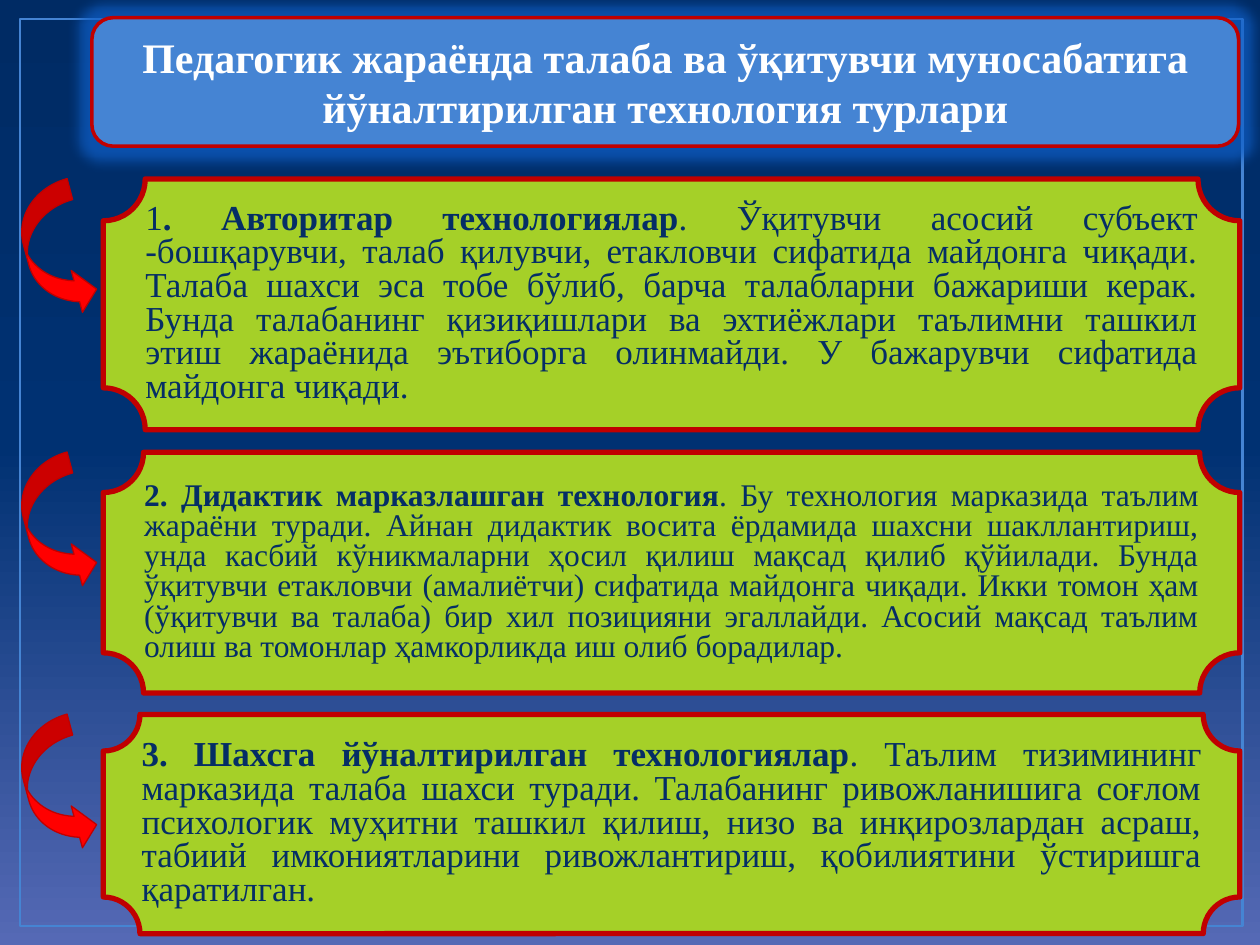
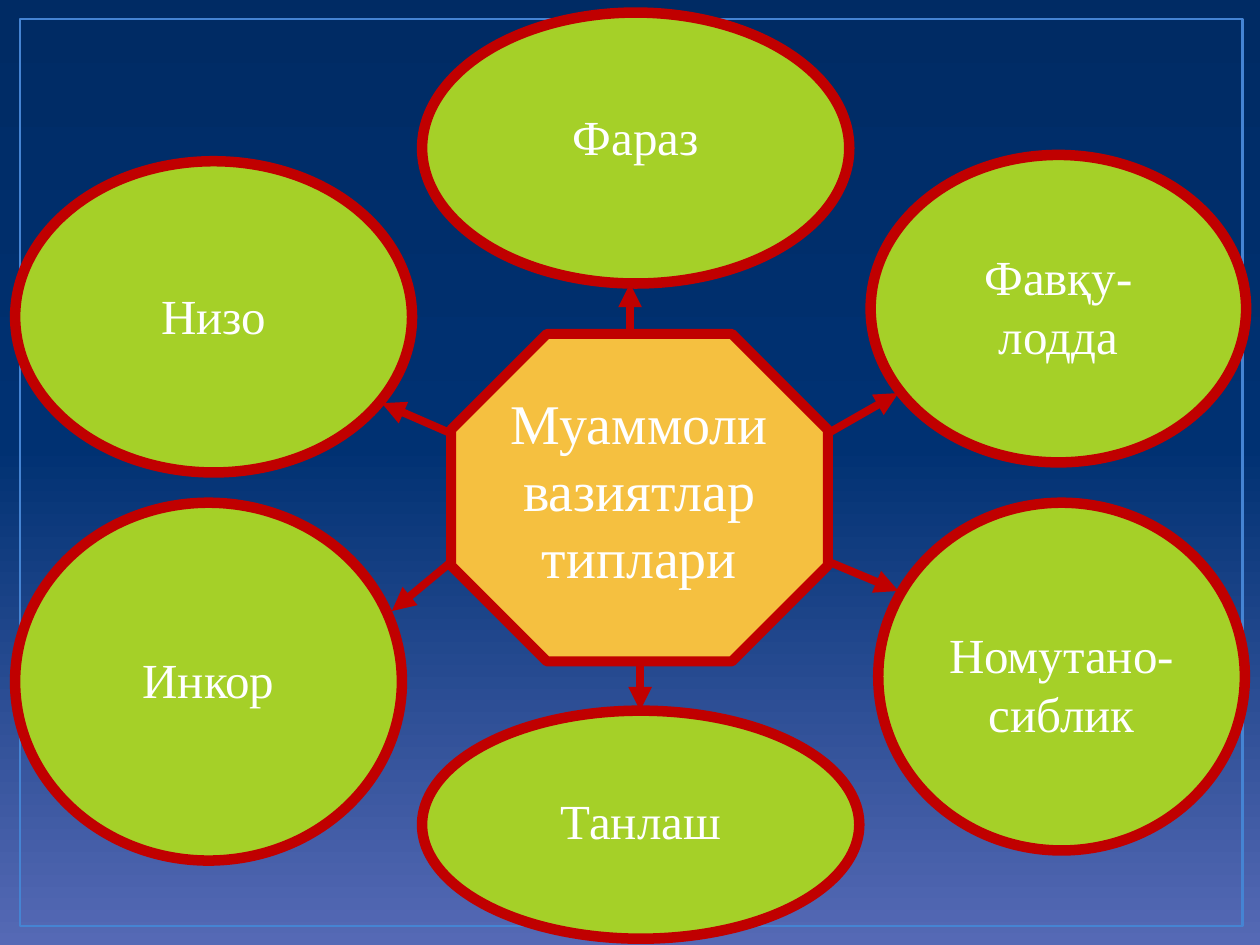
from copy import deepcopy
from dataclasses import dataclass

from lxml import etree
from pptx import Presentation
from pptx.dml.color import RGBColor
from pptx.enum import shapes, text
from pptx.oxml import ns
from pptx.util import Inches, Pt

# Shared style
FONT = "Times New Roman"
BLUE = RGBColor(0x45, 0x84, 0xD3)
GLOW = RGBColor(0x0F, 0x5F, 0xC8)
RED = RGBColor(0xFF, 0x00, 0x00)
DARK_RED = RGBColor(0xC0, 0x00, 0x00)
GREEN = RGBColor(0xA5, 0xD0, 0x28)
YELLOW = RGBColor(0xF5, 0xC0, 0x40)
NAVY = RGBColor(0x05, 0x2E, 0x65)
WHITE = RGBColor(0xFF, 0xFF, 0xFF)
BACKGROUND_STOPS = [
    (0, RGBColor(0x55, 0x69, 0xB5)),
    (0.53, RGBColor(0x00, 0x31, 0x72)),
    (1, RGBColor(0x00, 0x2B, 0x64)),
]
TITLE_ONLY, BLANK = 5, 6
LINE_HEIGHT = 1.15

Box = tuple[float, float, float, float]


@dataclass
class Technology:
    top: float
    height: float
    size: int
    runs: list[tuple[str, bool]]


@dataclass
class Situation:
    label: str
    box: Box
    gap: int  # space above the label, in points
    arrow: Box  # start x, start y, end x, end y


TECHNOLOGIES = [
    Technology(1.42, 1.99, 20, [
        ("1", False),
        (". Авторитар технологиялар", True),
        (". Ўқитувчи асосий субъект -бошқарувчи, талаб қилувчи, етакловчи "
         "сифатида майдонга чиқади. Талаба шахси эса тобе бўлиб, барча "
         "талабларни бажариши керак. Бунда талабанинг қизиқишлари ва "
         "эхтиёжлари таълимни ташкил этиш жараёнида эътиборга олинмайди. "
         "У бажарувчи сифатида майдонга чиқади.", False),
    ]),
    Technology(3.59, 1.91, 18, [
        ("2. Дидактик марказлашган технология", True),
        (". Бу технология марказида таълим жараёни туради. Айнан дидактик "
         "восита ёрдамида шахсни шакллантириш, унда касбий кўникмаларни "
         "ҳосил қилиш мақсад қилиб қўйилади. Бунда ўқитувчи етакловчи "
         "(амалиётчи) сифатида майдонга чиқади. Икки томон ҳам (ўқитувчи ва "
         "талаба) бир хил позицияни эгаллайди. Асосий мақсад таълим олиш ва "
         "томонлар ҳамкорликда иш олиб борадилар.", False),
    ]),
    Technology(5.67, 1.74, 20, [
        ("3. Шахсга йўналтирилган технологиялар", True),
        (". Таълим тизимининг марказида талаба шахси туради. Талабанинг "
         "ривожланишига соғлом психологик муҳитни ташкил қилиш, низо ва "
         "инқирозлардан асраш, табиий имкониятларини ривожлантириш, "
         "қобилиятини ўстиришга қаратилган.", False),
    ]),
]

SITUATIONS = [
    Situation("Фавқу-лодда", (6.91, 1.23, 2.98, 2.44), 20, (6.57, 3.44, 7.13, 3.12)),
    Situation("Номутано-сиблик", (6.97, 3.99, 2.91, 2.76), 32, (6.58, 4.46, 7.13, 4.69)),
    Situation("Танлаш", (3.35, 5.64, 3.47, 1.81), 20, (5.08, 5.25, 5.08, 5.64)),
    Situation("Инкор", (0.12, 3.99, 3.07, 2.84), 44, (3.58, 4.46, 3.11, 4.85)),
    Situation("Низо", (0.12, 1.28, 3.15, 2.47), 36, (3.58, 3.44, 3.03, 3.2)),
    Situation("Фараз", (3.35, 0.1, 3.39, 2.15), 24, (5, 2.65, 5, 2.25)),
]


def set_background(presentation) -> None:
    """Give the master its three-stop gradient, running upwards."""
    fill = presentation.slide_master.background.fill
    fill.gradient()
    fill.gradient_angle = 90
    stop_list = fill._fill._gradFill.gsLst
    stop_list.append(deepcopy(stop_list[-1]))
    for stop, (position, color) in zip(fill.gradient_stops, BACKGROUND_STOPS):
        stop.position = position
        stop.color.rgb = color


def add_shape(slide, kind, box: Box, *, fill=None, line=DARK_RED,
              width: float = 1, adjustments=()):
    shape = slide.shapes.add_shape(kind, *map(Inches, box))
    shape.shadow.inherit = False
    if fill is None:
        shape.fill.background()
    else:
        shape.fill.solid()
        shape.fill.fore_color.rgb = fill
    shape.line.color.rgb = line
    shape.line.width = Pt(width)
    for index, value in enumerate(adjustments):
        shape.adjustments[index] = value
    return shape


def write(shape, runs: list[tuple[str, bool]], *, size: int, color=WHITE,
          align=text.PP_ALIGN.CENTER, anchor=text.MSO_ANCHOR.MIDDLE,
          spacing: float | None = None, side: float = 0.1,
          top: float = 0.05) -> None:
    """Write (text, bold) runs as the one paragraph of a shape."""
    frame = shape.text_frame
    frame.word_wrap = True
    frame.auto_size = text.MSO_AUTO_SIZE.NONE
    frame.vertical_anchor = anchor
    frame.margin_left = frame.margin_right = Inches(side)
    frame.margin_top, frame.margin_bottom = Inches(top), Inches(0.05)
    paragraph = frame.paragraphs[0]
    paragraph.alignment = align
    if spacing:
        paragraph.line_spacing = spacing
    for content, bold in runs:
        run = paragraph.add_run()
        run.text = content
        run.font.name = FONT
        run.font.size = Pt(size)
        run.font.bold = bold
        run.font.color.rgb = color


def add_glow(shape, color: RGBColor, radius: float) -> None:
    effects = shape._element.spPr.find(ns.qn("a:effectLst"))
    glow = etree.SubElement(effects, ns.qn("a:glow"), rad=str(Inches(radius)))
    value = etree.SubElement(glow, ns.qn("a:srgbClr"), val=str(color))
    etree.SubElement(value, ns.qn("a:alpha"), val="70000")


def add_arrow(slide, points: Box) -> None:
    arrow = slide.shapes.add_connector(
        shapes.MSO_CONNECTOR.STRAIGHT, *map(Inches, points))
    arrow.line.color.rgb = DARK_RED
    arrow.line.width = Pt(4.5)
    etree.SubElement(arrow.line._get_or_add_ln(), ns.qn("a:tailEnd"), type="triangle")
    etree.SubElement(arrow._element.spPr, ns.qn("a:effectLst"))


def add_framed_slide(presentation, layout: int):
    slide = presentation.slides.add_slide(presentation.slide_layouts[layout])
    add_shape(slide, shapes.MSO_SHAPE.RECTANGLE, (0.16, 0.15, 9.7, 7.2),
              line=BLUE, width=1.5)
    return slide


def add_title(slide, content: str) -> None:
    box = (0.73, 0.14, 9.1, 1.02)
    band = add_shape(slide, shapes.MSO_SHAPE.ROUNDED_RECTANGLE, box, fill=BLUE,
                     width=2, adjustments=[0.167])
    add_glow(band, GLOW, 0.2)
    title = slide.shapes.title
    title.left, title.top, title.width, title.height = map(Inches, box)
    write(title, [(content, True)], size=24)
    band._element.addnext(title._element)  # title above its band


def build_technologies(presentation) -> None:
    slide = add_framed_slide(presentation, TITLE_ONLY)
    add_title(slide, "Педагогик жараёнда талаба ва ўқитувчи муносабатига "
                     "йўналтирилган технология турлари")
    for technology in TECHNOLOGIES:
        arrow = add_shape(slide, shapes.MSO_SHAPE.CURVED_RIGHT_ARROW,
                          (0.21, technology.top + 0.04, 0.47, 1.08), fill=RED,
                          width=0.75, adjustments=[0.366, 0.732, 0.333])
        arrow.rotation = 345
        plaque = add_shape(slide, shapes.MSO_SHAPE.PLAQUE,
                           (0.82, technology.top, 9.02, technology.height),
                           fill=GREEN, width=3, adjustments=[0.167])
        write(plaque, technology.runs, size=technology.size, color=NAVY,
              align=text.PP_ALIGN.JUSTIFY, spacing=0.8)


def build_situations(presentation) -> None:
    slide = add_framed_slide(presentation, BLANK)
    # Centre
    octagon = add_shape(slide, shapes.MSO_SHAPE.OCTAGON, (3.58, 2.65, 2.99, 2.6),
                        fill=YELLOW, width=5.75, adjustments=[0.293])
    write(octagon, [("Муаммоли вазиятлар типлари", False)], size=32,
          anchor=text.MSO_ANCHOR.TOP, side=0.09)
    # Ovals around it, each with its arrow
    for situation in SITUATIONS:
        oval = add_shape(slide, shapes.MSO_SHAPE.OVAL, situation.box,
                         fill=GREEN, width=6)
        write(oval, [(situation.label, False)], size=28,
              anchor=text.MSO_ANCHOR.TOP, side=0.09,
              top=0.05 + situation.gap * LINE_HEIGHT / 72)
        add_arrow(slide, situation.arrow)


def main() -> None:
    presentation = Presentation()
    presentation.slide_width, presentation.slide_height = Inches(10), Inches(7.5)
    set_background(presentation)
    build_technologies(presentation)
    build_situations(presentation)
    presentation.save("out.pptx")


if __name__ == "__main__":
    main()
